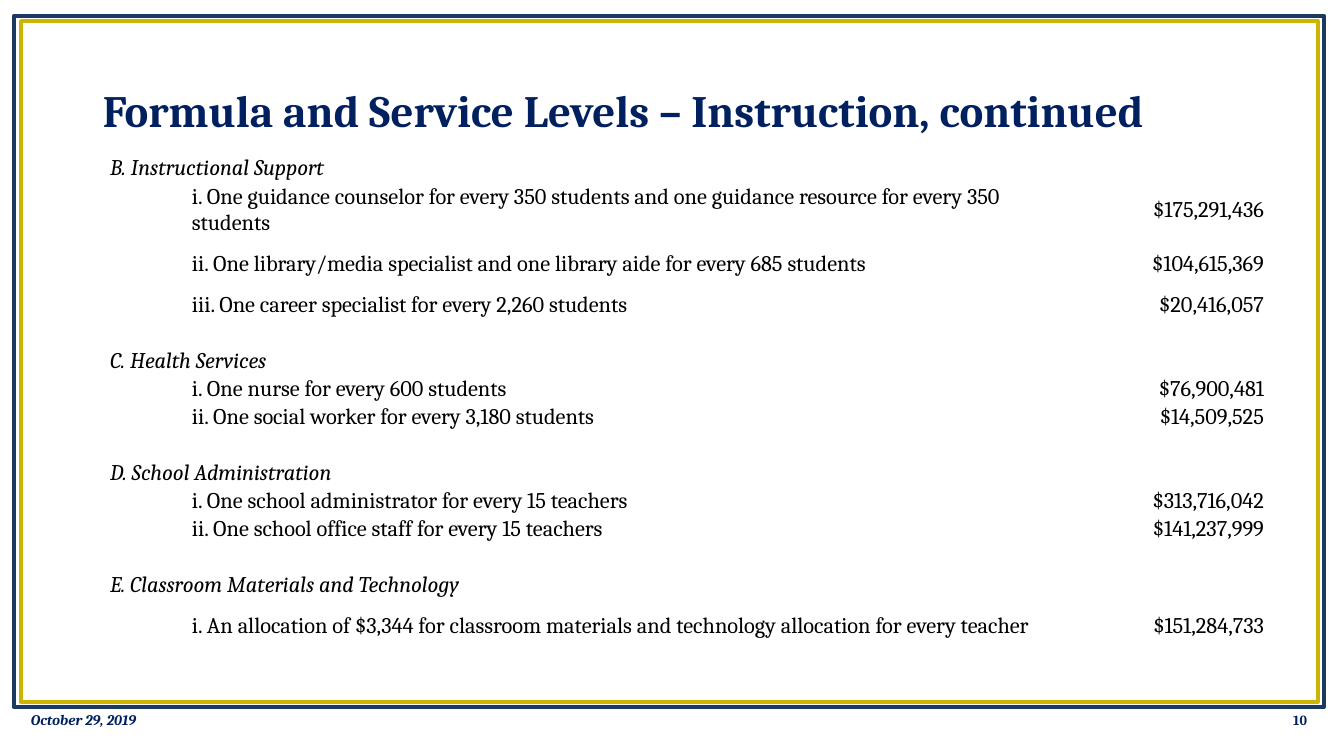
from lxml import etree
from pptx import Presentation
from pptx.dml.color import RGBColor
from pptx.enum.shapes import MSO_SHAPE
from pptx.enum.text import MSO_ANCHOR, PP_ALIGN
from pptx.oxml.ns import qn
from pptx.util import Inches, Pt

RECTANGLE = MSO_SHAPE.RECTANGLE
MIDDLE = MSO_ANCHOR.MIDDLE
LEFT = PP_ALIGN.LEFT
RIGHT = PP_ALIGN.RIGHT

PX_PER_INCH = 100.8
FONT = "Cambria"
COLORS = {"navy": "002060", "frame": "1C3961", "gold": "CCB400", "black": "000000"}
COLUMN_WIDTHS = (82, 848, 226)
ROW_HEIGHT = 28
TALL_ROW_HEIGHT = 54

SECTIONS = [
    ("B. Instructional Support", [
        ("i. One guidance counselor for every 350 students and one guidance "
         "resource for every 350 students", "$175,291,436", TALL_ROW_HEIGHT),
        ("ii. One library/media specialist and one library aide for every 685 students",
         "$104,615,369", TALL_ROW_HEIGHT),
        ("iii. One career specialist for every 2,260 students", "$20,416,057", ROW_HEIGHT),
    ]),
    ("C. Health Services", [
        ("i. One nurse for every 600 students", "$76,900,481", ROW_HEIGHT),
        ("ii. One social worker for every 3,180 students", "$14,509,525", ROW_HEIGHT),
    ]),
    ("D. School Administration", [
        ("i. One school administrator for every 15 teachers", "$313,716,042", ROW_HEIGHT),
        ("ii. One school office staff for every 15 teachers", "$141,237,999", ROW_HEIGHT),
    ]),
    ("E. Classroom Materials and Technology", [
        ("i. An allocation of $3,344 for classroom materials and technology "
         "allocation for every teacher", "$151,284,733", TALL_ROW_HEIGHT),
    ]),
]


def px(length):
    return Inches(length / PX_PER_INCH)


def color(name):
    return RGBColor.from_string(COLORS[name])


def write(paragraph, text, size, ink, bold=False, italic=False, align=LEFT):
    paragraph.text = text
    paragraph.alignment = align
    for run in paragraph.runs:
        font = run.font
        font.name = FONT
        font.size = Pt(size)
        font.bold = bold
        font.italic = italic
        font.color.rgb = color(ink)


def add_border(slide, left, top, width, height, ink, weight):
    border = slide.shapes.add_shape(RECTANGLE, px(left), px(top), px(width), px(height))
    border.shadow.inherit = False
    border.fill.background()
    border.line.color.rgb = color(ink)
    border.line.width = Pt(weight)


def add_label(slide, left, top, width, height, text, size, **style):
    frame = slide.shapes.add_textbox(px(left), px(top), px(width), px(height)).text_frame
    frame.word_wrap = True
    frame.vertical_anchor = MIDDLE
    write(frame.paragraphs[0], text, size, "navy", bold=True, **style)
    return frame


def fill_cell(cell, text, italic, align):
    cell.fill.background()
    cell.vertical_anchor = MIDDLE
    cell.margin_left = cell.margin_right = cell.margin_top = px(1)
    cell.margin_bottom = 0
    paragraph = cell.text_frame.paragraphs[0]
    if text:
        write(paragraph, text, 16, "black", italic=italic, align=align)
    else:
        etree.SubElement(paragraph._p, qn("a:endParaRPr"), sz="1000")


def table_rows():
    rows = []
    for heading, services in SECTIONS:
        if rows:
            rows.append(("", "", "", ROW_HEIGHT))
        rows.append((heading, "", "", ROW_HEIGHT))
        rows.extend(("", *service) for service in services)
    return rows


def add_funding_table(slide, left, top):
    rows = table_rows()
    table = slide.shapes.add_table(
        len(rows), len(COLUMN_WIDTHS), px(left), px(top),
        px(sum(COLUMN_WIDTHS)), px(sum(row[-1] for row in rows))).table
    table.first_row = False
    table.horz_banding = False
    for column, width in zip(table.columns, COLUMN_WIDTHS):
        column.width = px(width)
    for index, (heading, service, amount, height) in enumerate(rows):
        table.rows[index].height = px(height)
        fill_cell(table.cell(index, 0), heading, True, LEFT)
        fill_cell(table.cell(index, 1), service, False, LEFT)
        fill_cell(table.cell(index, 2), amount, False, RIGHT)
        if heading:
            table.cell(index, 0).merge(table.cell(index, 1))


def main():
    deck = Presentation()
    deck.slide_width = px(1344)
    deck.slide_height = px(756)
    slide = deck.slides.add_slide(deck.slide_layouts[6])
    add_border(slide, 14, 16, 1310, 691, "frame", 3)
    add_border(slide, 21, 21, 1297, 681, "gold", 2.5)
    title = add_label(slide, 93, 40, 1159, 146,
                      "Formula and Service Levels – Instruction, continued", 32)
    title.paragraphs[0].line_spacing = 0.9
    add_label(slide, 1015, 700, 302, 40, "10", 10, align=RIGHT)
    add_funding_table(slide, 109, 154)
    add_label(slide, 21, 700, 302, 40, "October 29, 2019", 10.5, italic=True)
    deck.save("out.pptx")


if __name__ == "__main__":
    main()
